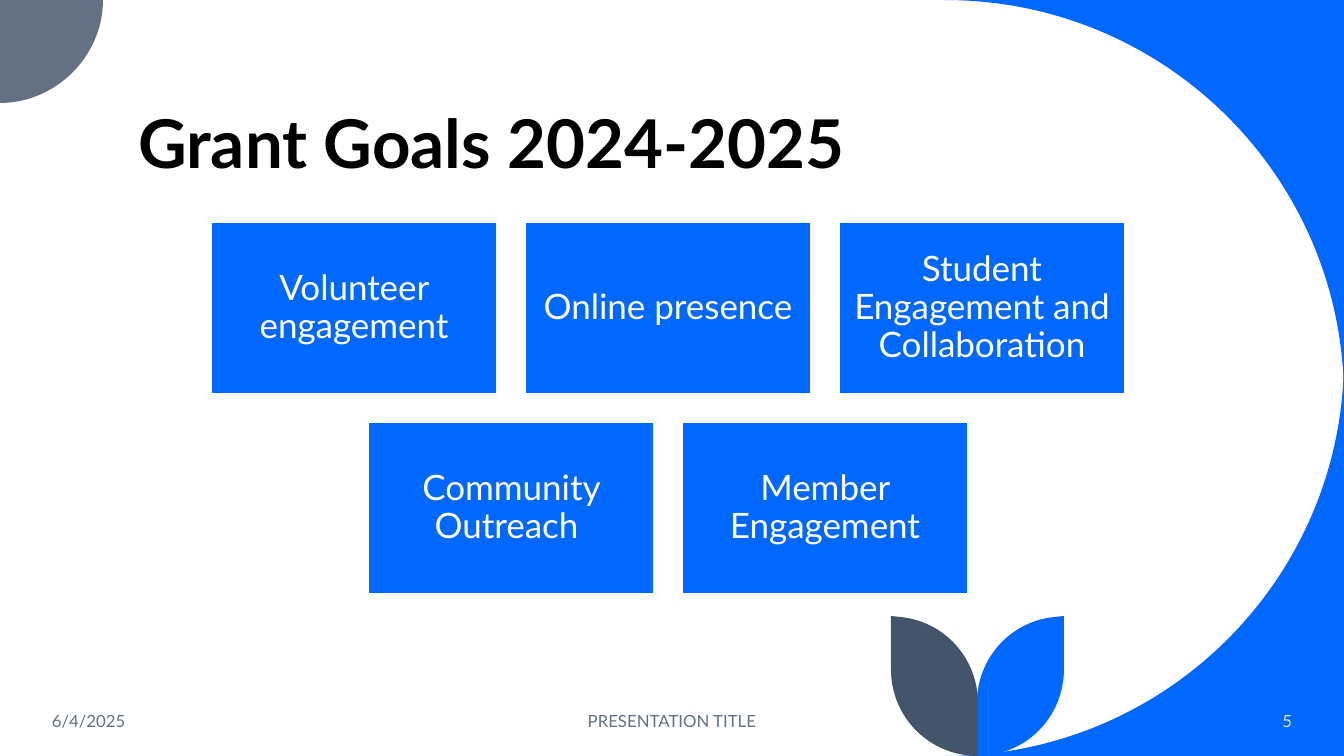
"""Build the grant goals slide."""
from dataclasses import dataclass

import lxml.etree
import pptx
import pptx.dml.color
import pptx.enum.shapes
import pptx.enum.text
import pptx.oxml.ns
import pptx.util


@dataclass(frozen=True)
class Theme:
    font: str = "Lato"
    blue: str = "0068FF"
    slate: str = "637183"
    navy: str = "44546A"
    pale: str = "DAE5EF"
    white: str = "FFFFFF"
    black: str = "000000"
    title_size: int = 48
    card_size: int = 25
    footer_size: int = 12


theme = Theme()
color = pptx.dml.color.RGBColor.from_string
align = pptx.enum.text.PP_ALIGN
anchor = pptx.enum.text.MSO_ANCHOR
qn = pptx.oxml.ns.qn
PX = 914400 / 100.8
WIDTH, HEIGHT = 1344, 756


def write(box, text, *, size, ink, alignment, bold=False, vertical=anchor.MIDDLE, spacing=1.0):
    frame = box.text_frame
    frame.word_wrap = True
    frame.auto_size = pptx.enum.text.MSO_AUTO_SIZE.NONE
    frame.vertical_anchor = vertical
    para = frame.paragraphs[0]
    para.alignment = alignment
    para.line_spacing = spacing
    span = para.add_run()
    span.text = text
    span.font.name = theme.font
    span.font.size = pptx.util.Pt(size)
    span.font.bold = bold
    span.font.color.rgb = color(ink)


def draw_outline(page, fill, start, *segments):
    points = [(x * PX, y * PX) for segment in segments for x, y in segment]
    builder = page.shapes.build_freeform(start[0] * PX, start[1] * PX, scale=1.0)
    builder.add_line_segments(points, close=True)
    shape = builder.convert_to_shape()
    lines = iter(list(shape._element.iter(qn("a:lnTo"))))
    for segment in segments:
        first, *others = [next(lines) for point in segment]
        if others:
            curve = lxml.etree.Element(qn("a:cubicBezTo"))
            first.addprevious(curve)
            for line in (first, *others):
                curve.append(line[0])
                line.getparent().remove(line)
    shape.shadow.inherit = False
    shape.fill.solid()
    shape.fill.fore_color.rgb = color(fill)
    shape.line.fill.background()


deck = pptx.Presentation()
deck.slide_width, deck.slide_height = round(WIDTH * PX), round(HEIGHT * PX)
page = deck.slides.add_slide(deck.slide_layouts[5])
page.background.fill.solid()
page.background.fill.fore_color.rgb = color(theme.white)

draw_outline(page, theme.blue, (WIDTH, 0), [(945, 0)], [(1166, 0), (WIDTH, 178), (WIDTH, 398)])
draw_outline(page, theme.blue, (WIDTH, 358), [(WIDTH, 578), (1166, HEIGHT), (945, HEIGHT)],
             [(WIDTH, HEIGHT)])
draw_outline(page, theme.slate, (0, 0), [(103, 0)], [(103, 56), (56, 103), (0, 103)])
for fill, stem, side in [(theme.blue, 977, 1), (theme.navy, 978, -1)]:
    tip = stem + 87 * side
    draw_outline(page, fill, (tip, 616), [(tip, 669)],
                 [(tip, 718), (stem + 48 * side, HEIGHT), (stem, HEIGHT)],
                 [(stem, 703)],
                 [(stem, 658), (stem + 34 * side, 621), (stem + 78 * side, 617)])

title = page.shapes.title
title.left, title.top, title.width, title.height = [round(n * PX) for n in (128, 42, 1078, 146)]
write(title, "Grant Goals 2024-2025", size=theme.title_size, ink=theme.black,
      alignment=align.LEFT, bold=True, vertical=anchor.BOTTOM, spacing=0.9)

goal_rows = [
    ["Volunteer engagement", "Online presence", "Student Engagement and Collaboration"],
    ["Community Outreach ", "Member Engagement"],
]
card_width, card_height, gap, first_left, first_top = 286, 172, 28, 211, 222
pitch = card_width + gap
for row, goals in enumerate(goal_rows):
    row_left = first_left + (len(goal_rows[0]) - len(goals)) * pitch // 2
    for column, goal in enumerate(goals):
        bounds = (row_left + column * pitch, first_top + row * (card_height + gap),
                  card_width, card_height)
        card = page.shapes.add_shape(pptx.enum.shapes.MSO_SHAPE.RECTANGLE,
                                     *[round(n * PX) for n in bounds])
        card.shadow.inherit = False
        card.fill.solid()
        card.fill.fore_color.rgb = color(theme.blue)
        card.line.color.rgb = color(theme.white)
        card.line.width = pptx.util.Pt(1)
        frame = card.text_frame
        frame.margin_left = frame.margin_right = round(10 * PX)
        frame.margin_top = frame.margin_bottom = round(10 * PX)
        write(card, goal, size=theme.card_size, ink=theme.white,
              alignment=align.CENTER, spacing=0.9)

footers = [
    ("6/4/2025", 42, 302, align.LEFT, theme.slate),
    ("PRESENTATION TITLE", 445, 454, align.CENTER, theme.slate),
    ("5", 1119, 183, align.RIGHT, theme.pale),
]
for text, left, width, alignment, ink in footers:
    box = page.shapes.add_textbox(*[round(n * PX) for n in (left, 701, width, 40)])
    write(box, text, size=theme.footer_size, ink=ink, alignment=alignment)

deck.save("out.pptx")
